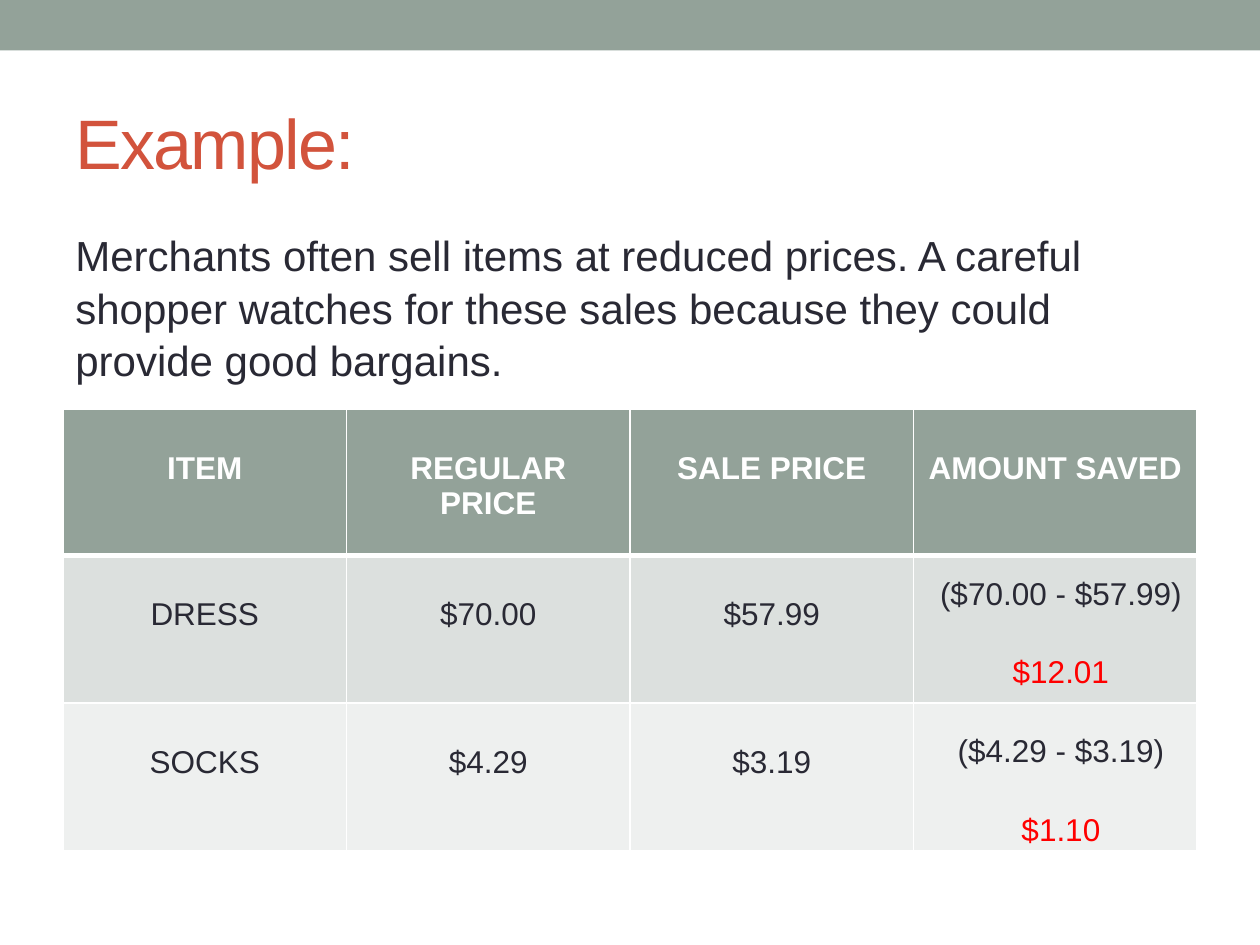
from lxml.etree import SubElement
from pptx import Presentation
from pptx.dml.color import RGBColor
from pptx.enum.shapes import MSO_SHAPE
from pptx.enum.text import MSO_ANCHOR, PP_ALIGN
from pptx.oxml.ns import qn
from pptx.util import Inches, Pt

SAGE, RUST, INK, RED, WHITE = "93A299", "D2533C", "292934", "FF0000", "FFFFFF"
BANDS = [SAGE, "DCE0DE", "EEF0EF"]
HEIGHTS = [1.16, 1.17, 1.17]
ROWS = [
    ["ITEM", "REGULAR PRICE", "SALE PRICE", "AMOUNT SAVED"],
    ["DRESS", "$70.00", "$57.99", ""],
    ["SOCKS", "$4.29", "$3.19", ""],
]
SAVINGS = [
    (4.49, "($70.00 - $57.99)", "$12.01"),
    (5.74, "($4.29 - $3.19)", "$1.10"),
]


def paint(fill, color):
    fill.solid()
    fill.fore_color.rgb = RGBColor.from_string(color)


def write(para, text, size=18, color=INK, bold=False, align=PP_ALIGN.LEFT,
          before=0, lead=1.0, track=0):
    para.alignment = align
    para.space_before = Pt(before)
    para.line_spacing = lead
    run = para.add_run()
    run.text = text
    font = run.font
    font.name, font.size, font.bold = "Arial", Pt(size), bold
    font.color.rgb = RGBColor.from_string(color)
    if track:
        font._element.set("spc", str(track * 100))


def edge(cell, side, width):
    line = SubElement(cell._tc.get_or_add_tcPr(), qn(f"a:ln{side}"),
                      w=str(Pt(width)))
    fill = SubElement(line, qn("a:solidFill"))
    SubElement(fill, qn("a:srgbClr"), val=WHITE)


class Deck:
    def __init__(self):
        self.file = Presentation()
        self.file.slide_width = Inches(10)
        self.file.slide_height = Inches(7.5)
        self.slide = self.file.slides.add_slide(self.file.slide_layouts[6])

    def bar(self, box, color):
        shape = self.slide.shapes.add_shape(
            MSO_SHAPE.RECTANGLE, *map(Inches, box))
        shape.shadow.inherit = False
        paint(shape.fill, color)
        shape.line.fill.background()

    def text(self, box, *parts, anchor=MSO_ANCHOR.TOP):
        frame = self.slide.shapes.add_textbox(*map(Inches, box)).text_frame
        frame.word_wrap = True
        frame.vertical_anchor = anchor
        for i, (words, form) in enumerate(parts):
            para = frame.add_paragraph() if i else frame.paragraphs[0]
            write(para, words, **form)

    def table(self, box, rows, heights):
        grid = self.slide.shapes.add_table(
            len(rows), len(rows[0]), *map(Inches, box)).table
        for r, row in enumerate(rows):
            grid.rows[r].height = Inches(heights[r])
            for c, words in enumerate(row):
                self.cell(grid.cell(r, c), words, r)

    def cell(self, cell, words, r):
        cell.margin_top = Inches(0.33)
        for side in "LRTB":
            heavy = (r, side) in [(0, "B"), (1, "T")]
            edge(cell, side, 3 if heavy else 1)
        paint(cell.fill, BANDS[r])
        if words:
            write(cell.text_frame.paragraphs[0], words, bold=r == 0,
                  color=INK if r else WHITE, align=PP_ALIGN.CENTER)


def main():
    deck = Deck()
    deck.bar((0, 0, 10, 0.4), SAGE)
    deck.text((0.5, 0.58, 9, 1.08),
              ("Example:", dict(size=40, color=RUST, track=-1)),
              anchor=MSO_ANCHOR.MIDDLE)
    deck.text((0.5, 1.75, 9, 1.4),
              ("Merchants often sell items at reduced prices. A careful "
               "shopper watches for these sales because they could provide "
               "good bargains.", dict(size=24, before=1, lead=1.05)))
    deck.table((0.5, 3.25, 9, 3.5), ROWS, HEIGHTS)
    form = dict(align=PP_ALIGN.CENTER, lead=1.05)
    for top, sum_, saved in SAVINGS:
        deck.text((5.92, top, 5, 1.01), (sum_, form),
                  (saved, dict(form, color=RED, before=22)))
    deck.file.save("out.pptx")


if __name__ == "__main__":
    main()
